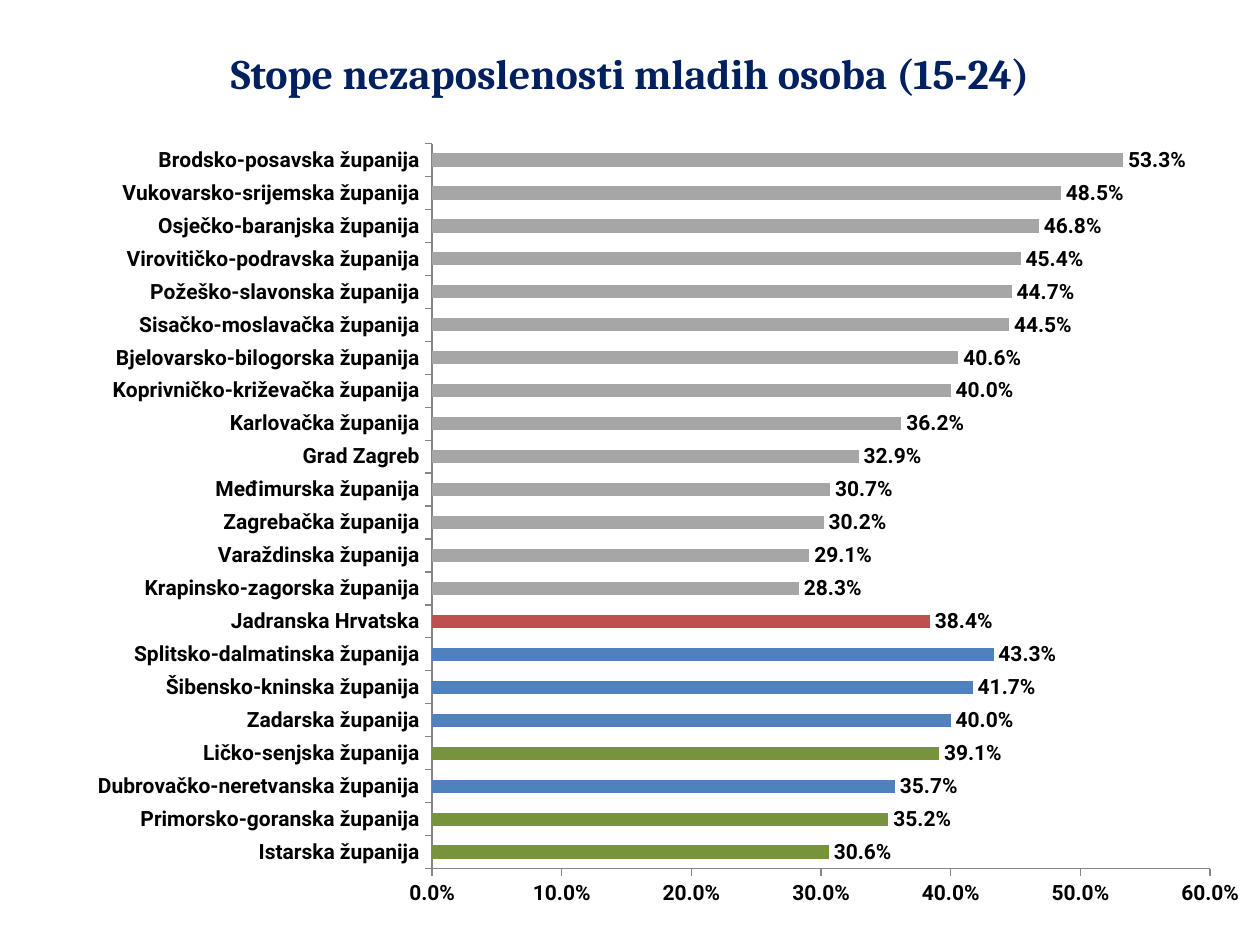
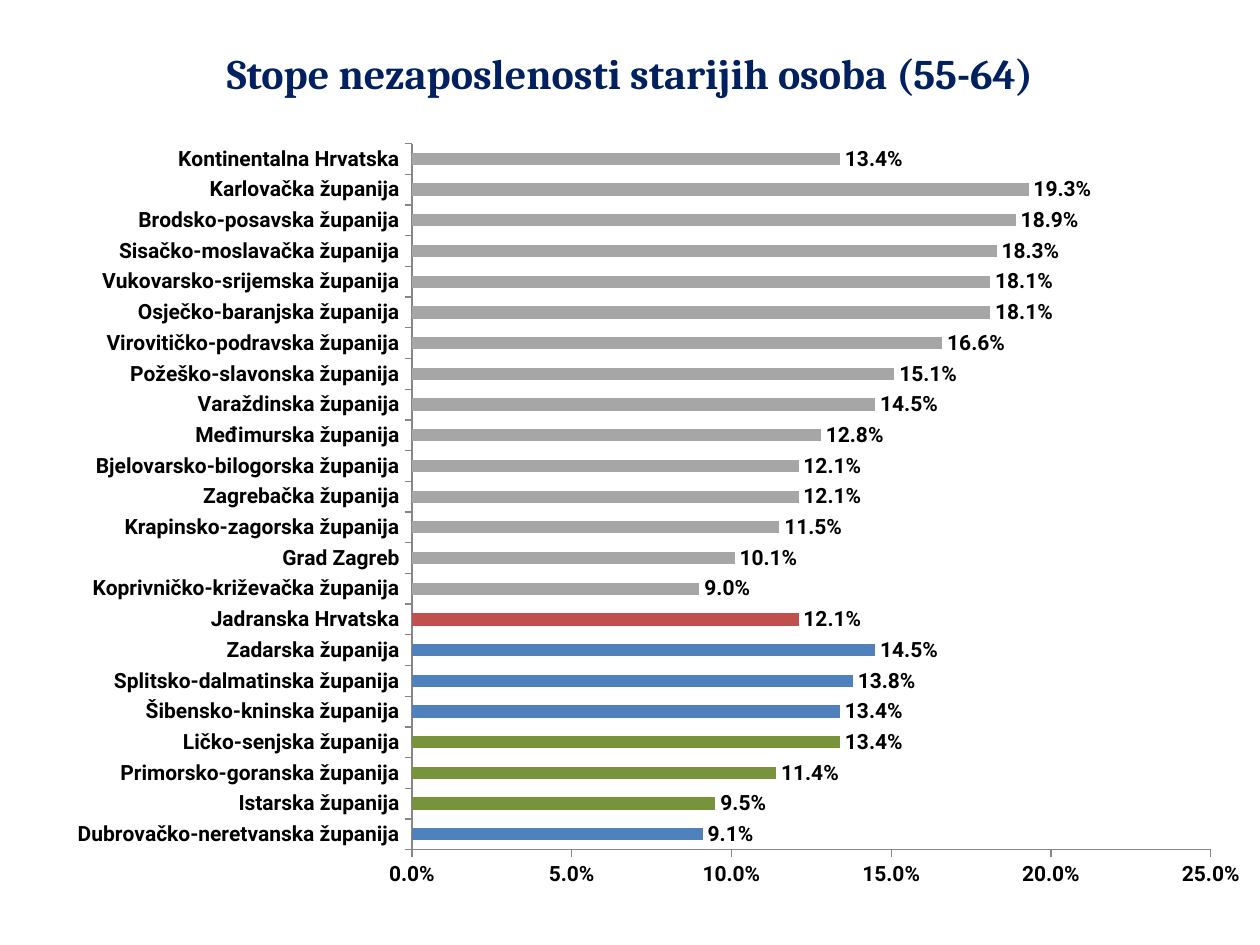
"""Build two slides of unemployment rates by Croatian county and age group."""
from dataclasses import dataclass

from lxml.etree import fromstring
from pptx import Presentation
from pptx.chart.axis import CategoryAxis, ValueAxis
from pptx.chart.chart import Chart
from pptx.chart.data import CategoryChartData
from pptx.dml.color import RGBColor
from pptx.enum.chart import XL_CHART_TYPE, XL_LABEL_POSITION, XL_TICK_LABEL_POSITION, XL_TICK_MARK
from pptx.enum.text import MSO_ANCHOR, PP_ALIGN
from pptx.oxml.ns import qn
from pptx.slide import Slide
from pptx.util import Inches, Pt

CHART_NAMESPACE = "http://schemas.openxmlformats.org/drawingml/2006/chart"
DRAWING_NAMESPACE = "http://schemas.openxmlformats.org/drawingml/2006/main"


@dataclass(frozen=True)
class Theme:
    title_font: str = "Cambria"
    chart_font: str = "Roboto"
    title_size: int = 24
    chart_size: int = 12
    title_color: str = "002060"
    text_color: str = "000000"
    background: str = "FFFFFF"
    axis_line: str = "868686"
    continental: str = "A6A6A6"
    adriatic: str = "C0504D"
    north_adriatic: str = "77933C"
    south_adriatic: str = "4F81BD"
    percent_format: str = "0.0%"


@dataclass(frozen=True)
class PlotFrame:
    left: float
    top: float
    width: float
    height: float


@dataclass(frozen=True)
class RatePage:
    title: str
    chart_left: float
    plot: PlotFrame
    axis_maximum: float
    axis_step: float
    rates: dict[str, float]


THEME = Theme()
SLIDE_WIDTH, SLIDE_HEIGHT = 10, 7.5
TITLE_HEIGHT, CHART_TOP = 1.15, 0.99

REGION_COLORS = {
    "Jadranska Hrvatska": THEME.adriatic,
    **dict.fromkeys(
        ("Istarska županija", "Primorsko-goranska županija", "Ličko-senjska županija"),
        THEME.north_adriatic,
    ),
    **dict.fromkeys(
        ("Dubrovačko-neretvanska županija", "Zadarska županija",
         "Šibensko-kninska županija", "Splitsko-dalmatinska županija"),
        THEME.south_adriatic,
    ),
}

PAGES = [
    RatePage(
        "Stope nezaposlenosti mladih osoba (15-24)",
        0.12, PlotFrame(0.335, 0.023, 0.625, 0.884), 0.6, 0.1,
        {
            "Istarska županija": 0.306,
            "Primorsko-goranska županija": 0.352,
            "Dubrovačko-neretvanska županija": 0.357,
            "Ličko-senjska županija": 0.391,
            "Zadarska županija": 0.4,
            "Šibensko-kninska županija": 0.417,
            "Splitsko-dalmatinska županija": 0.433,
            "Jadranska Hrvatska": 0.384,
            "Krapinsko-zagorska županija": 0.283,
            "Varaždinska županija": 0.291,
            "Zagrebačka županija": 0.302,
            "Međimurska županija": 0.307,
            "Grad Zagreb": 0.329,
            "Karlovačka županija": 0.362,
            "Koprivničko-križevačka županija": 0.4,
            "Bjelovarsko-bilogorska županija": 0.406,
            "Sisačko-moslavačka županija": 0.445,
            "Požeško-slavonska županija": 0.447,
            "Virovitičko-podravska županija": 0.454,
            "Osječko-baranjska županija": 0.468,
            "Vukovarsko-srijemska županija": 0.485,
            "Brodsko-posavska županija": 0.533,
        },
    ),
    RatePage(
        "Stope nezaposlenosti starijih osoba (55-64)",
        0, PlotFrame(0.327, 0.023, 0.634, 0.861), 0.25, 0.05,
        {
            "Dubrovačko-neretvanska županija": 0.091,
            "Istarska županija": 0.095,
            "Primorsko-goranska županija": 0.114,
            "Ličko-senjska županija": 0.134,
            "Šibensko-kninska županija": 0.134,
            "Splitsko-dalmatinska županija": 0.138,
            "Zadarska županija": 0.145,
            "Jadranska Hrvatska": 0.121,
            "Koprivničko-križevačka županija": 0.09,
            "Grad Zagreb": 0.101,
            "Krapinsko-zagorska županija": 0.115,
            "Zagrebačka županija": 0.121,
            "Bjelovarsko-bilogorska županija": 0.121,
            "Međimurska županija": 0.128,
            "Varaždinska županija": 0.145,
            "Požeško-slavonska županija": 0.151,
            "Virovitičko-podravska županija": 0.166,
            "Osječko-baranjska županija": 0.181,
            "Vukovarsko-srijemska županija": 0.181,
            "Sisačko-moslavačka županija": 0.183,
            "Brodsko-posavska županija": 0.189,
            "Karlovačka županija": 0.193,
            "Kontinentalna Hrvatska": 0.134,
        },
    ),
]


def paint(fill, color: str) -> None:
    fill.solid()
    fill.fore_color.rgb = RGBColor.from_string(color)


def style_font(font, name: str, size: int, color: str) -> None:
    font.name = name
    font.size = Pt(size)
    font.bold = True
    font.color.rgb = RGBColor.from_string(color)


def add_title(slide: Slide, text: str) -> None:
    title = slide.shapes.title
    title.left, title.top = Inches(0), Inches(0)
    title.width, title.height = Inches(SLIDE_WIDTH), Inches(TITLE_HEIGHT)
    paint(title.fill, THEME.background)
    title.text_frame.text = text
    title.text_frame.vertical_anchor = MSO_ANCHOR.MIDDLE
    paragraph = title.text_frame.paragraphs[0]
    paragraph.alignment = PP_ALIGN.CENTER
    style_font(paragraph.font, THEME.title_font, THEME.title_size, THEME.title_color)


def place_plot(chart: Chart, frame: PlotFrame) -> None:
    plot_area = chart.element.find(qn("c:chart")).find(qn("c:plotArea"))
    for layout in plot_area.findall(qn("c:layout")):
        plot_area.remove(layout)
    plot_area.insert(0, fromstring(
        f'<c:layout xmlns:c="{CHART_NAMESPACE}"><c:manualLayout>'
        '<c:layoutTarget val="inner"/><c:xMode val="edge"/><c:yMode val="edge"/>'
        f'<c:x val="{frame.left}"/><c:y val="{frame.top}"/>'
        f'<c:w val="{frame.width}"/><c:h val="{frame.height}"/>'
        "</c:manualLayout></c:layout>"
    ))


def fill_chart_area(chart: Chart) -> None:
    chart.element.find(qn("c:chart")).addnext(fromstring(
        f'<c:spPr xmlns:c="{CHART_NAMESPACE}" xmlns:a="{DRAWING_NAMESPACE}">'
        f'<a:solidFill><a:srgbClr val="{THEME.background}"/></a:solidFill>'
        "<a:ln><a:noFill/></a:ln></c:spPr>"
    ))


def style_axis(axis: CategoryAxis | ValueAxis) -> None:
    axis.has_major_gridlines = False
    axis.major_tick_mark = XL_TICK_MARK.OUTSIDE
    axis.minor_tick_mark = XL_TICK_MARK.NONE
    axis.tick_label_position = XL_TICK_LABEL_POSITION.NEXT_TO_AXIS
    axis.format.line.color.rgb = RGBColor.from_string(THEME.axis_line)
    axis.format.line.width = Pt(0.75)


def add_rate_chart(slide: Slide, page: RatePage) -> None:
    data = CategoryChartData(number_format=THEME.percent_format)
    data.categories = list(page.rates)
    data.add_series("Series 1", list(page.rates.values()))
    chart = slide.shapes.add_chart(
        XL_CHART_TYPE.BAR_CLUSTERED, Inches(page.chart_left), Inches(CHART_TOP),
        Inches(SLIDE_WIDTH - page.chart_left), Inches(SLIDE_HEIGHT - CHART_TOP), data,
    ).chart
    chart.has_title = False
    chart.has_legend = False
    style_font(chart.font, THEME.chart_font, THEME.chart_size, THEME.text_color)
    fill_chart_area(chart)
    place_plot(chart, page.plot)

    style_axis(chart.category_axis)
    value_axis = chart.value_axis
    style_axis(value_axis)
    value_axis.minimum_scale = 0
    value_axis.maximum_scale = page.axis_maximum
    value_axis.major_unit = page.axis_step
    value_axis.tick_labels.number_format = THEME.percent_format
    value_axis.tick_labels.number_format_is_linked = False

    plot = chart.plots[0]
    plot.gap_width = 150
    plot.vary_by_categories = False
    series = plot.series[0]
    series.invert_if_negative = False
    paint(series.format.fill, THEME.continental)
    for index, county in enumerate(page.rates):
        if county in REGION_COLORS:
            paint(series.points[index].format.fill, REGION_COLORS[county])

    labels = series.data_labels
    labels.show_value = True
    labels.number_format = THEME.percent_format
    labels.number_format_is_linked = False
    labels.position = XL_LABEL_POSITION.OUTSIDE_END
    style_font(labels.font, THEME.chart_font, THEME.chart_size, THEME.text_color)


def main() -> None:
    deck = Presentation()
    deck.slide_width, deck.slide_height = Inches(SLIDE_WIDTH), Inches(SLIDE_HEIGHT)
    title_only = deck.slide_layouts.get_by_name("Title Only")
    for page in PAGES:
        slide = deck.slides.add_slide(title_only)
        add_title(slide, page.title)
        add_rate_chart(slide, page)
    deck.save("out.pptx")


if __name__ == "__main__":
    main()
